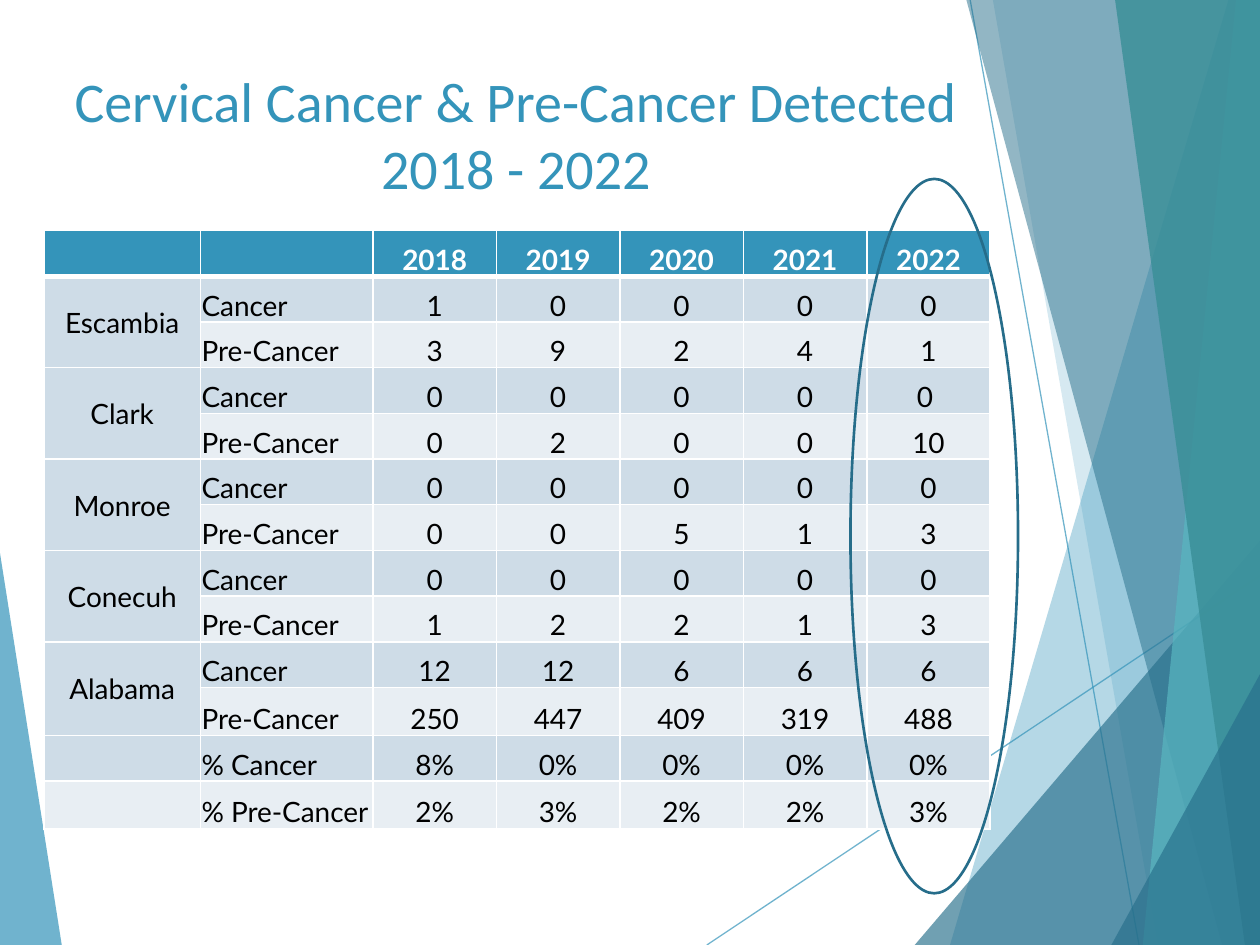
from dataclasses import dataclass

from pptx import Presentation
from pptx.dml.color import RGBColor
from pptx.enum.shapes import MSO_CONNECTOR, MSO_SHAPE
from pptx.enum.text import MSO_ANCHOR as Anchor, PP_ALIGN as Align
from pptx.oxml import parse_xml
from pptx.oxml.ns import nsdecls, qn
from pptx.util import Inches, Pt
from lxml.etree import SubElement


@dataclass(frozen=True)
class Theme:
    blue: str = "3494BA"
    deep: str = "276F8B"
    aqua: str = "58B6C0"
    teal: str = "3A8F98"
    ring: str = "266D8A"
    band: tuple = ("CEDCE7", "E8EEF3")
    white: str = "FFFFFF"
    black: str = "000000"
    title_font: str = "Calibri"
    body_font: str = "Lato"
    title_size: int = 32
    body_size: int = 16


T = Theme()
W, H = 10, 7.5
NBSP = chr(160)

TITLE = "Cervical Cancer & Pre-Cancer Detected\v2018 - 2022"
YEARS = ["2018", "2019", "2020", "2021", "2022"]
COUNTIES = {
    "Escambia": ("1 0 0 0 0", "3 9 2 4 1"),
    "Clark": ("0 0 0 0 0" + NBSP, "0 2 0 0 10"),
    "Monroe": ("0 0 0 0 0", "0 0 5 1 3"),
    "Conecuh": ("0 0 0 0 0", "1 2 2 1 3"),
    "Alabama": ("12 12 6 6 6", "250 447 409 319 488"),
}
SHARES = {"% Cancer": "8% 0% 0% 0% 0%", "% Pre-Cancer": "2% 3% 2% 2% 3%"}

# Side facets, back to front: corner points, colour, opacity in percent
LEFT_FACET = ([(0, 4.39), (0.49, H), (0, H)], T.blue, 70)
RIGHT_FACETS = [
    ([(9.75, 0), (7.54, H), (W, H), (W, 0)], T.blue, 36),
    ([(7.88, 0), (9.19, H), (W, H), (W, 0)], T.blue, 20),
    ([(7.26, H), (W, 4.29), (W, H)], T.deep, 66),
    ([(7.67, 0), (9.7, H), (W, H), (W, 0)], T.deep, 50),
    ([(9.81, 0), (9.07, H), (W, H), (W, 0)], T.aqua, 70),
    ([(8.85, 0), (9.88, H), (W, H), (W, 0)], T.teal, 82),
    ([(8.82, H), (W, 5.35), (W, H)], T.deep, 66),
]
RAYS = [((5.61, H), (W, 4.57)), ((7.7, 0), (9.04, H))]

TABLE = (0.35, 1.83, 7.5, 4.75)
COLS = [1.24, 1.37] + [0.98] * len(YEARS)
TALL_ROWS, TALL = (10, 12), 0.38
RING = (6.75, 1.42, 1.33, 5.67)


def rgb(value):
    return RGBColor.from_string(value)


def inches(values):
    return [Inches(v) for v in values]


def set_opacity(fmt, color, percent):
    """Colour a solid fill and make it partly transparent."""
    fmt.solid()
    fmt.fore_color.rgb = rgb(color)
    clr = fmt._xPr.find(qn("a:solidFill"))[0]
    SubElement(clr, qn("a:alpha")).set("val", str(percent * 1000))


def add_facet(s, points, color, opacity):
    (x, y), *rest = [inches(p) for p in points]
    fb = s.shapes.build_freeform(x, y)
    fb.add_line_segments(rest, close=True)
    sp = fb.convert_to_shape()
    sp.shadow.inherit = False
    sp.line.fill.background()
    set_opacity(sp.fill, color, opacity)


def add_ray(s, start, end):
    ray = s.shapes.add_connector(MSO_CONNECTOR.STRAIGHT, *inches(start + end))
    ray.line.width = Pt(0.75)
    set_opacity(ray.line.fill, T.blue, 70)
    SubElement(ray._element.spPr, qn("a:effectLst"))


def format_runs(p, font, size, color, bold=False):
    for r in p.runs:
        r.font.name, r.font.size, r.font.bold = font, Pt(size), bold
        r.font.color.rgb = rgb(color)


def set_borders(cell, bottom):
    pr = cell._tc.get_or_add_tcPr()
    for i, side in enumerate("LRTB"):
        width = Pt(bottom if side == "B" else 1)
        pr.insert(i, parse_xml(
            f'<a:ln{side} {nsdecls("a")} w="{width}"><a:solidFill>'
            f'<a:srgbClr val="{T.white}"/></a:solidFill></a:ln{side}>'))


def table_rows():
    rows = [["", ""] + YEARS]
    for county, (cancer, pre) in COUNTIES.items():
        rows.append([county, "Cancer"] + cancer.split(" "))
        rows.append(["", "Pre-Cancer"] + pre.split(" "))
    return rows + [["", name] + v.split(" ") for name, v in SHARES.items()]


def add_results(s):
    rows = table_rows()
    table = s.shapes.add_table(len(rows), len(COLS), *inches(TABLE)).table
    for col, width in zip(table.columns, COLS):
        col.width = Inches(width)
    plain = (TABLE[3] - TALL * len(TALL_ROWS)) / (len(rows) - len(TALL_ROWS))
    for i, row in enumerate(rows):
        table.rows[i].height = Inches(TALL if i in TALL_ROWS else plain)
        header = i == 0
        for j, text in enumerate(row):
            cell = table.cell(i, j)
            cell.text = text
            cell.margin_left = cell.margin_right = cell.margin_top = Inches(0.01)
            cell.margin_bottom = 0
            cell.vertical_anchor = Anchor.BOTTOM if j else Anchor.MIDDLE
            cell.fill.solid()
            cell.fill.fore_color.rgb = rgb(T.blue if header else T.band[(i - 1) % 2])
            set_borders(cell, bottom=3 if header else 1)
            p = cell.text_frame.paragraphs[0]
            p.alignment = Align.LEFT if j == 1 else Align.CENTER
            format_runs(p, T.body_font, T.body_size,
                        T.white if header else T.black, header)
    for i in range(1, 2 * len(COUNTIES), 2):
        table.cell(i, 0).merge(table.cell(i + 1, 0))


def add_title(s):
    title = s.shapes.title
    title.left, title.top, title.width, title.height = inches((0.17, 0.48, 7.85, 1.14))
    tf = title.text_frame
    tf.text = TITLE
    tf.word_wrap = True
    tf.vertical_anchor = Anchor.TOP
    tf.paragraphs[0].alignment = Align.CENTER
    format_runs(tf.paragraphs[0], T.title_font, T.title_size, T.blue)
    title.element.getparent().append(title.element)  # in front of the facets


def add_ring(s):
    ring = s.shapes.add_shape(MSO_SHAPE.OVAL, *inches(RING))
    ring.shadow.inherit = False
    ring.fill.background()
    ring.line.color.rgb = rgb(T.ring)
    ring.line.width = Pt(1.5)


def main():
    prs = Presentation()
    prs.slide_width, prs.slide_height = inches((W, H))
    s = prs.slides.add_slide(prs.slide_layouts[5])
    add_facet(s, *LEFT_FACET)
    for ray in RAYS:
        add_ray(s, *ray)
    for facet in RIGHT_FACETS:
        add_facet(s, *facet)
    add_title(s)
    add_results(s)
    add_ring(s)
    prs.save("out.pptx")


if __name__ == "__main__":
    main()
